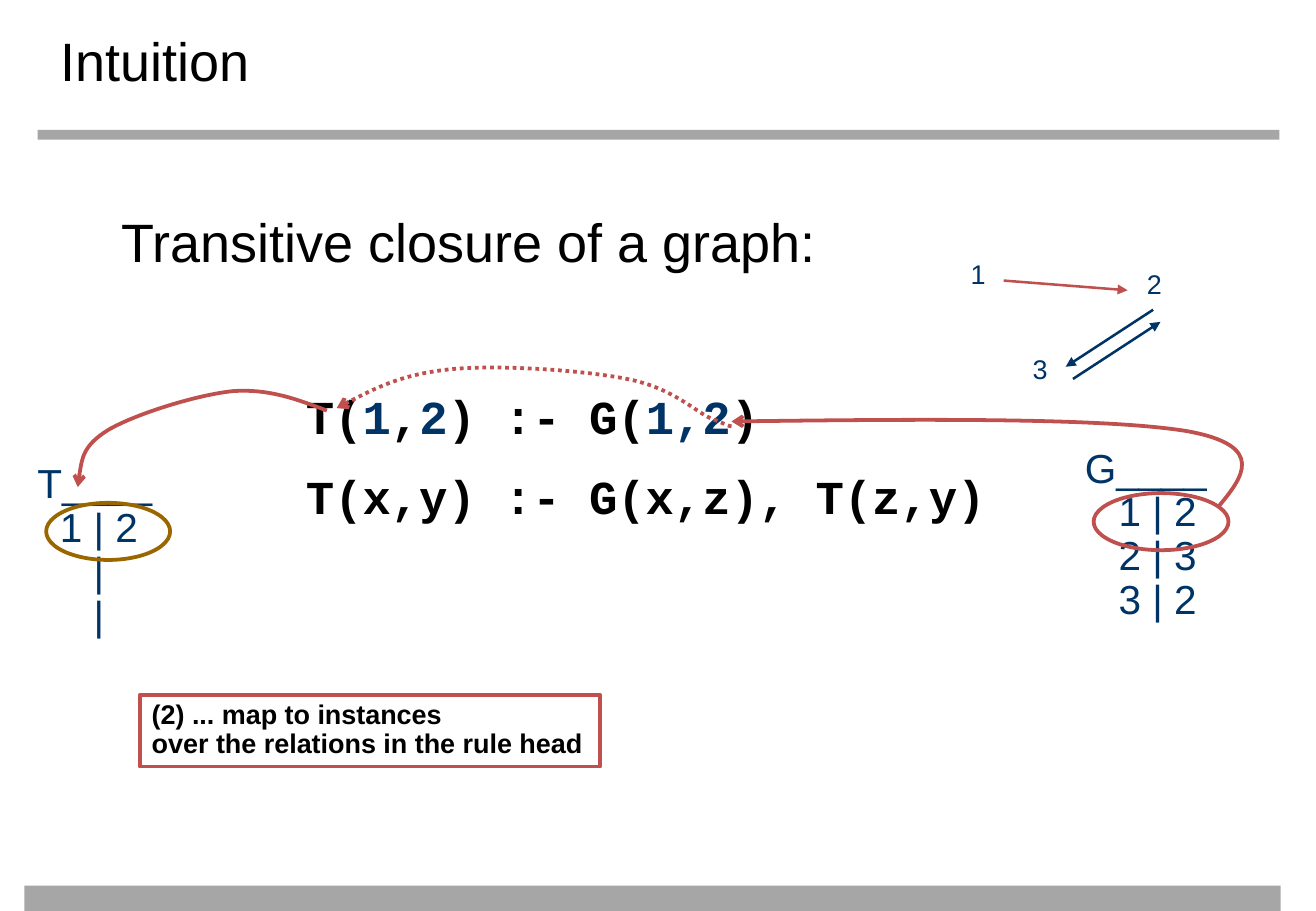
import lxml.etree
import pptx
import pptx.dml.color
import pptx.enum.dml
import pptx.enum.shapes
import pptx.enum.text
import pptx.oxml.ns
import pptx.util

BLACK, NAVY, RED, GREY, OCHRE = "000000", "003366", "C0504D", "A6A6A6", "996600"
CELL = pptx.util.Inches(0.1)
CURVE_UNITS = 100  # curve coordinates per grid cell
qn = pptx.oxml.ns.qn


def grid(*cells):
    """Turn counts of grid cells into slide lengths."""
    return [pptx.util.Emu(round(CELL * cell)) for cell in cells]


def color(value):
    return pptx.dml.color.RGBColor.from_string(value)


presentation = pptx.Presentation()
presentation.slide_width, presentation.slide_height = grid(108.3, 75)
slide = presentation.slides.add_slide(presentation.slide_layouts[6])

# Text boxes: place, wrap, outline, font, line spacing,
# paragraphs of (left indent, space before, runs of (text, colour))
heading = {"name": "Arial", "size": pptx.util.Pt(32)}
code = {"name": "Courier New", "size": pptx.util.Pt(28), "bold": True}
relation = {"name": "Arial", "size": pptx.util.Pt(24)}
node = {"name": "Arial", "size": pptx.util.Pt(16)}
note = {**node, "bold": True}

rule_head = [("T(", BLACK), ("1", NAVY), (",", BLACK), ("2", NAVY),
             (") :- G(", BLACK), ("1,2", NAVY), (")", BLACK)]
texts = [
    ((3.9, 1.8, 100, 6), True, None, heading, 1, [(0.1, 0, [("Intuition", BLACK)])]),
    ((9, 16.7, 92.2, 6.1), True, None, heading, 1,
     [(0, 0, [("Transitive closure of a graph:", BLACK)])]),
    ((24.2, 31.4, 66, 12.5), True, None, code, 1,
     [(0, 0, rule_head), (0, 14, [("T(x,y) :- G(x,z), T(z,y)", BLACK)])]),
    ((88.3, 36.4, 13.9, 15.7), True, None, relation, 0.9,
     [(0, 0, [("G____", NAVY)])]
     + [(2.78, 0, [(row, NAVY)]) for row in ("1 | 2", "2 | 3", "3 | 2")]),
    ((2.1, 37.7, 13.9, 15.7), True, None, relation, 0.9,
     [(indent, 0, [(row, NAVY)])
      for indent, row in ((0, "T____"), (1.85, "1 | 2"), (4.63, "|"), (4.63, "|"))]),
    ((11.5, 57.2, 37.9, 5.9), False, RED, note, 0.9,
     [(0, 0, [(line, BLACK)])
      for line in ("(2) ... map to instances", "over the relations in the rule head")]),
]
for label, left, top in (("1", 78.9, 21), ("2", 93.4, 21.8), ("3", 84, 28.8)):
    texts.append(((left, top, 3.3, 3.5), False, None, node, 0.9,
                  [(0, 0, [(label, NAVY)])]))

for place, wrap, outline, font, spacing, paragraphs in texts:
    box = slide.shapes.add_textbox(*grid(*place))
    frame = box.text_frame
    frame.word_wrap = wrap
    if outline:
        box.line.color.rgb = color(outline)
        box.line.width = pptx.util.Pt(2.25)
    for index, (indent, before, runs) in enumerate(paragraphs):
        paragraph = frame.add_paragraph() if index else frame.paragraphs[0]
        paragraph.line_spacing = spacing
        paragraph.space_before = pptx.util.Pt(before)
        paragraph._p.get_or_add_pPr().set("marL", str(grid(indent)[0]))
        for text, text_color in runs:
            run = paragraph.add_run()
            run.text = text
            run.font.color.rgb = color(text_color)
            for name, value in font.items():
                setattr(run.font, name, value)

# Bars and the rings around the matching tuples
rectangle = pptx.enum.shapes.MSO_SHAPE.RECTANGLE
oval = pptx.enum.shapes.MSO_SHAPE.OVAL
for kind, place, fill, outline in (
    (rectangle, (2, 72.9, 103.4, 2.1), GREY, None),
    (rectangle, (3.1, 10.7, 102.2, 0.8), GREY, None),
    (oval, (90, 40.6, 11.1, 4.7), None, RED),
    (oval, (3.8, 41.4, 10.2, 4.7), None, OCHRE),
):
    shape = slide.shapes.add_shape(kind, *grid(*place))
    shape.shadow.inherit = False
    if fill:
        shape.fill.solid()
        shape.fill.fore_color.rgb = color(fill)
        shape.line.fill.background()
    else:
        shape.fill.background()
        shape.line.color.rgb = color(outline)
        shape.line.width = pptx.util.Pt(2.25)

# Curved arrows: the end with the tip, dotted or not, then a start point
# followed by three points for each Bézier segment
arrows = []
for end, dotted, points in (
    ("a:tailEnd", False, [(100.2, 41.8), (102.3, 39.3), (104.3, 36.7), (97.7, 35.5),
                          (91, 34.4), (75.6, 34.5), (60.2, 34.7)]),
    ("a:tailEnd", True, [(60.2, 35.1), (60, 35.1), (59.9, 35), (58.4, 34.4),
                         (57, 33.7), (55.2, 31.9), (51.6, 31.2),
                         (48.1, 30.5), (41.1, 30), (37.1, 30.4),
                         (33.1, 30.8), (30.4, 32.2), (27.7, 33.6)]),
    ("a:headEnd", False, [(6.4, 40.1), (6.6, 38.4), (6.8, 36.7), (8.9, 35.4),
                          (11.1, 34.1), (16.2, 32.5), (19.2, 32.2),
                          (22.2, 32), (24.5, 32.9), (26.9, 33.8)]),
):
    start, *rest = [(round(x * CURVE_UNITS), round(y * CURVE_UNITS)) for x, y in points]
    builder = slide.shapes.build_freeform(*start, scale=CELL / CURVE_UNITS)
    builder.add_line_segments(rest, close=False)
    curve = builder.convert_to_shape()
    curve.shadow.inherit = False
    curve.fill.background()
    outline = curve._element.find(".//" + qn("a:path"))
    segments = outline.findall(qn("a:lnTo"))
    for first in range(0, len(segments), 3):
        bezier = lxml.etree.SubElement(outline, qn("a:cubicBezTo"))
        for segment in segments[first:first + 3]:
            bezier.append(segment[0])
            outline.remove(segment)
    arrows.append((curve, RED, 2.25, end, "arrow", dotted))

# Edges of the graph
for ends, edge_color in (
    ((82.6, 23.1, 92.8, 23.9), RED),
    ((94.9, 25.5, 87.7, 30.2), NAVY),
    ((88.3, 31.2, 95.5, 26.5), NAVY),
):
    edge = slide.shapes.add_connector(
        pptx.enum.shapes.MSO_CONNECTOR.STRAIGHT, *grid(*ends))
    arrows.append((edge, edge_color, 1.5, "a:tailEnd", "triangle", False))
    lxml.etree.SubElement(edge._element.spPr, qn("a:effectLst"))

for arrow, arrow_color, width, end, tip, dotted in arrows:
    arrow.line.color.rgb = color(arrow_color)
    arrow.line.width = pptx.util.Pt(width)
    if dotted:
        arrow.line.dash_style = pptx.enum.dml.MSO_LINE.ROUND_DOT
    lxml.etree.SubElement(arrow.line._get_or_add_ln(), qn(end), type=tip)

presentation.save("out.pptx")
